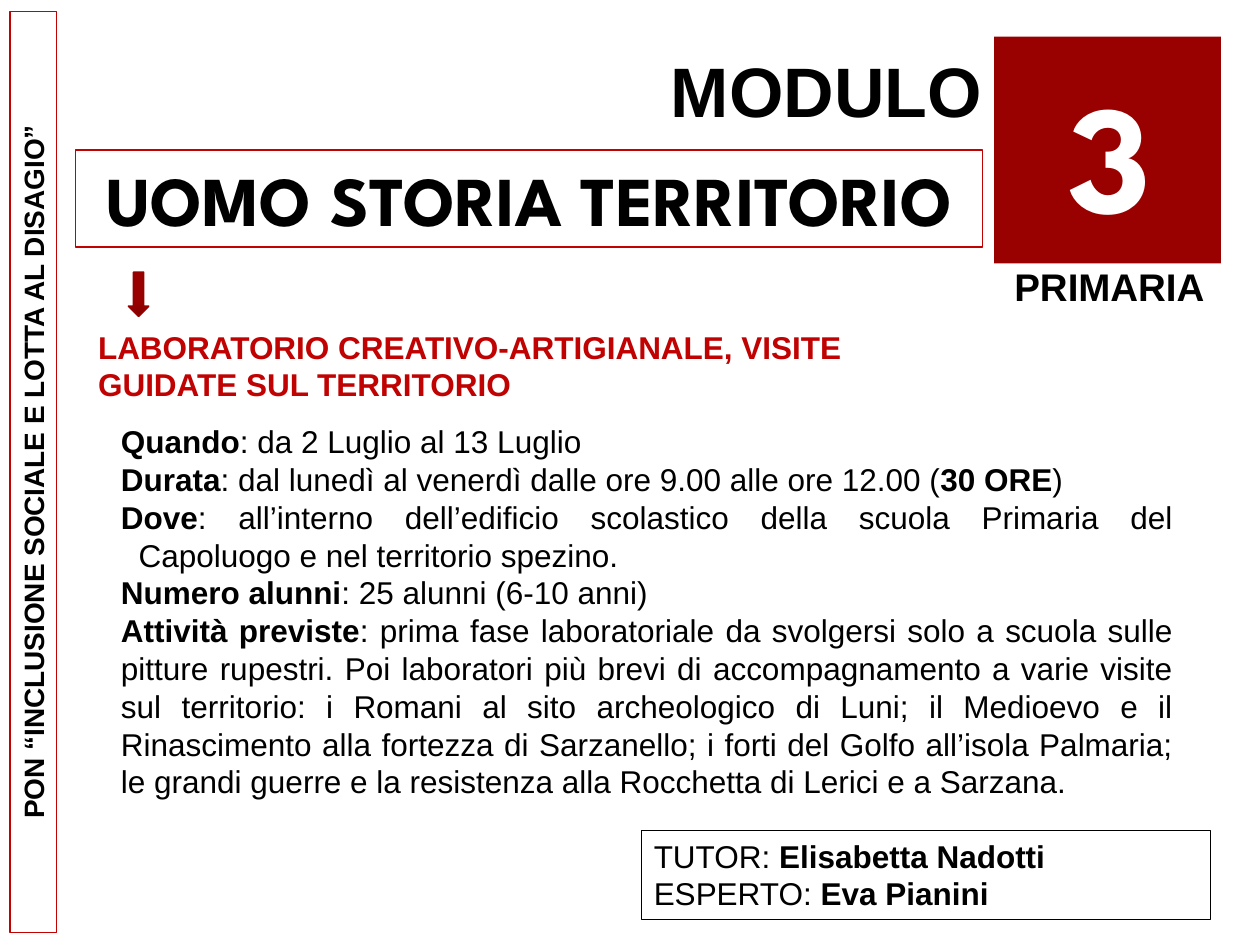
from dataclasses import dataclass
from typing import Optional

from pptx import Presentation
from pptx import util as u
from pptx.dml.color import RGBColor
from pptx.enum import shapes, text
from pptx.oxml.ns import qn
from pptx.oxml.xmlchemy import OxmlElement

PX = 9144  # 100 px to the inch
BLACK, WHITE, RED, DARK_RED = "000000", "FFFFFF", "C00202", "990000"
LEFT, CENTER = text.PP_ALIGN.LEFT, text.PP_ALIGN.CENTER
RIGHT, JUSTIFY = text.PP_ALIGN.RIGHT, text.PP_ALIGN.JUSTIFY


@dataclass
class Block:
    """Text in a place; *stars* mark bold, a newline marks a line break."""
    box: tuple[int, int, int, int]
    paragraphs: list[str]
    size: int
    align: text.PP_ALIGN = LEFT
    color: str = BLACK
    font: str = "Arial"
    border: Optional[str] = None
    border_width: float = 0.75
    rotation: int = 0


def rgb(value: str) -> RGBColor:
    return RGBColor.from_string(value)


def lengths(box: tuple[int, int, int, int]) -> list[int]:
    return [value * PX for value in box]


def write_paragraph(paragraph, marked: str, block: Block) -> None:
    paragraph.alignment = block.align
    paragraph.space_before = u.Pt(0)
    for index, piece in enumerate(marked.split("*")):
        for row, line in enumerate(piece.split("\n")):
            if row:
                paragraph.add_line_break()
            if line:
                run = paragraph.add_run()
                run.text = line
                run.font.name = block.font
                run.font.size = u.Pt(block.size)
                run.font.bold = index % 2 == 1
                run.font.color.rgb = rgb(block.color)


def fill_block(shape, block: Block) -> None:
    shape.left, shape.top, shape.width, shape.height = lengths(block.box)
    shape.rotation = block.rotation
    if block.border:
        shape.line.color.rgb = rgb(block.border)
        shape.line.width = u.Pt(block.border_width)
    frame = shape.text_frame
    frame.word_wrap = True
    frame.auto_size = text.MSO_AUTO_SIZE.NONE
    frame.vertical_anchor = text.MSO_ANCHOR.TOP
    for index, marked in enumerate(block.paragraphs):
        paragraph = frame.add_paragraph() if index else frame.paragraphs[0]
        write_paragraph(paragraph, marked, block)


def add_preset(slide, kind: shapes.MSO_SHAPE, box: tuple[int, int, int, int]):
    shape = slide.shapes.add_shape(kind, *lengths(box))
    shape.shadow.inherit = False
    return shape


def add_block(slide, block: Block) -> None:
    if block.border:
        shape = add_preset(slide, shapes.MSO_SHAPE.RECTANGLE, block.box)
        shape.fill.background()
    else:
        shape = slide.shapes.add_textbox(*lengths(block.box))
    fill_block(shape, block)


def remove_bullet(paragraph, hanging: int = 0) -> None:
    properties = paragraph._p.get_or_add_pPr()
    properties.set("marL", str(hanging * PX))
    properties.set("indent", str(-hanging * PX))
    properties.append(OxmlElement("a:buNone"))


TITLE = Block((60, 119, 720, 77), ["*UOMO STORIA TERRITORIO*"], 40, CENTER,
              font="League Spartan", border=RED)
DETAILS = Block((86, 330, 855, 313), [
    "*Quando*: da 2 Luglio al 13 Luglio",
    "*Durata*: dal lunedì al venerdì dalle ore 9.00 alle ore 12.00 (*30 ORE*)",
    "*Dove*: all’interno dell’edificio scolastico della scuola Primaria del\n"
    "Capoluogo e nel territorio spezino.",
    "*Numero alunni*: 25 alunni (6-10 anni)",
    "*Attività previste*: prima fase laboratoriale da svolgersi solo a scuola "
    "sulle pitture rupestri. Poi laboratori più brevi di accompagnamento a "
    "varie visite sul territorio: i Romani al sito archeologico di Luni; il "
    "Medioevo e il Rinascimento alla fortezza di Sarzanello; i forti del Golfo "
    "all’isola Palmaria; le grandi guerre e la resistenza alla Rocchetta di "
    "Lerici e a Sarzana.",
], 18, JUSTIFY)
BLOCKS = [
    Block((-339, 356, 731, 37),
          ["*PON “INCLUSIONE SOCIALE E LOTTA AL DISAGIO”*"], 16, CENTER,
          border=RED, border_width=1, rotation=270),
    Block((509, 33, 280, 77), ["*MODULO*"], 40, RIGHT),
    Block((802, 42, 157, 158), ["*3*"], 88, CENTER, WHITE, "League Spartan"),
    Block((789, 204, 183, 47), ["*PRIMARIA*"], 22, CENTER),
    Block((68, 255, 722, 71),
          ["*LABORATORIO CREATIVO-ARTIGIANALE, VISITE GUIDATE SUL TERRITORIO*"],
          18, color=RED),
    Block((509, 659, 452, 71),
          ["TUTOR: *Elisabetta Nadotti*", "ESPERTO: *Eva Pianini*"], 18,
          border=BLACK),
]


def main() -> None:
    deck = Presentation()
    deck.slide_width, deck.slide_height = 1000 * PX, 750 * PX
    slide = deck.slides.add_slide(deck.slide_layouts[1])

    # Module title and details
    fill_block(slide.shapes.title, TITLE)
    details = slide.placeholders[1]
    fill_block(details, DETAILS)
    for paragraph in details.text_frame.paragraphs:
        is_place = paragraph.text.startswith("Dove")
        remove_bullet(paragraph, hanging=14 if is_place else 0)

    # Square behind the module number
    square = add_preset(slide, shapes.MSO_SHAPE.RECTANGLE, (789, 29, 180, 180))
    square.fill.solid()
    square.fill.fore_color.rgb = rgb(DARK_RED)
    square.line.fill.background()

    # Labels, side banner and staff
    for block in BLOCKS:
        add_block(slide, block)

    # Arrow from the title to the workshop
    arrow = add_preset(slide, shapes.MSO_SHAPE.DOWN_ARROW, (102, 216, 16, 35))
    arrow.fill.gradient()
    arrow.fill.gradient_angle = 90
    for stop, shade in zip(arrow.fill.gradient_stops, ("830000", DARK_RED)):
        stop.color.rgb = rgb(shade)
    list(arrow.element.iter(qn("a:gs")))[-1].set("pos", "35000")
    arrow.line.color.rgb = rgb("960000")
    arrow.line.width = u.Pt(1)

    deck.save("out.pptx")


if __name__ == "__main__":
    main()
